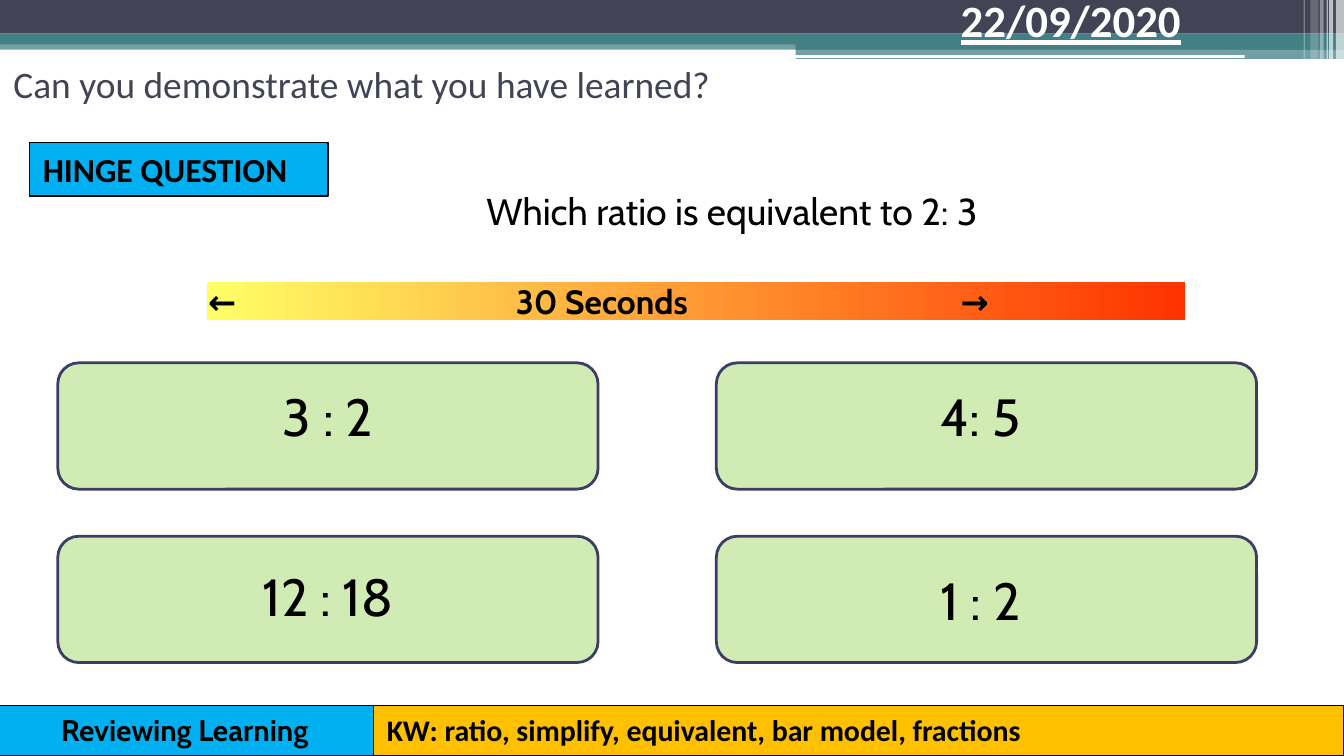
from typing import NamedTuple, Optional

from lxml.etree import SubElement
from pptx import Presentation
from pptx.dml.color import RGBColor
from pptx.enum.shapes import MSO_SHAPE
from pptx.enum.text import MSO_ANCHOR, PP_ALIGN
from pptx.oxml.ns import qn
from pptx.util import Inches, Pt


class Area(NamedTuple):
    left: float
    top: float
    width: float
    height: float

    def lengths(self):
        return [Inches(value) for value in self]


class Band(NamedTuple):
    area: Area
    color: str
    opacity: int = 100


class Style(NamedTuple):
    size: int
    font: str = "Cabin"
    color: str = "000000"
    bold: bool = False
    underline: bool = False
    align: PP_ALIGN = PP_ALIGN.LEFT
    wrap: bool = True
    anchor: MSO_ANCHOR = MSO_ANCHOR.TOP


class Answer(NamedTuple):
    text: str
    column: int
    row: int
    text_top: float


def paint(target, color: str, opacity: int = 100) -> None:
    target.solid()
    target.fore_color.rgb = RGBColor.from_string(color)
    if opacity < 100:
        # python-pptx has no public transparency setting
        tint = target._xPr.find(qn("a:solidFill"))[0]
        SubElement(tint, qn("a:alpha"), val=str(opacity * 1000))


def draw_shape(page, area: Area, color: str, opacity: int = 100,
               line: Optional[str] = None, line_width: float = 0.75,
               kind=MSO_SHAPE.RECTANGLE):
    shape = page.shapes.add_shape(kind, *area.lengths())
    shape.shadow.inherit = False
    paint(shape.fill, color, opacity)
    if line:
        paint(shape.line.fill, line)
        shape.line.width = Pt(line_width)
    else:
        shape.line.fill.background()
    return shape


def write(shape, text: str, style: Style):
    frame = shape.text_frame
    frame.word_wrap = style.wrap
    frame.vertical_anchor = style.anchor
    para = frame.paragraphs[0]
    para.alignment = style.align
    span = para.add_run()
    span.text = text
    span.font.name = style.font
    span.font.size = Pt(style.size)
    span.font.bold = style.bold
    span.font.underline = style.underline
    span.font.color.rgb = RGBColor.from_string(style.color)
    return para


def draw_text(page, area: Area, text: str, style: Style):
    return write(page.shapes.add_textbox(*area.lengths()), text, style)


def draw_label(page, area: Area, color: str, text: str, style: Style) -> None:
    write(draw_shape(page, area, color, line="000000"), text, style)


def draw_header(page) -> None:
    bands = [
        Band(Area(0, 0.3, 10, 0.07), "438086", 75),
        Band(Area(0, 0, 10, 0.25), "424456"),
        Band(Area(0, 0.25, 10, 0.08), "438086"),
        Band(Area(5.92, 0.3, 4.08, 0.07), "438086"),
        Band(Area(5.92, 0.36, 4.08, 0.15), "438086", 75),
        # Light stripes at the right edge
        Band(Area(9.94, 0, 0.06, 0.51), "FFFFFF", 65),
        Band(Area(9.89, 0, 0.03, 0.51), "FFFFFF", 65),
        Band(Area(9.87, 0, 0.01, 0.51), "FFFFFF", 60),
        Band(Area(9.82, 0, 0.03, 0.51), "FFFFFF", 40),
        Band(Area(9.75, 0, 0.06, 0.48), "FFFFFF", 20),
        Band(Area(9.7, 0, 0.01, 0.48), "FFFFFF", 30),
    ]
    for band in bands:
        draw_shape(page, *band)
    draw_shape(page, Area(5.91, 0.41, 3.35, 0.02), "FFFFFF",
               kind=MSO_SHAPE.ROUNDED_RECTANGLE)
    draw_text(page, Area(7.05, -0.1, 2.95, 0.4), "22/09/2020",
              Style(24, "Calibri", "FFFFFF", bold=True, underline=True))
    draw_shape(page, Area(5.87, 0.45, 4.13, 0.31), "FFFFFF",
               line="FFFFFF", line_width=1.5)


def draw_timer(page) -> None:
    bar = draw_shape(page, Area(1.54, 2.1, 7.28, 0.28), "FFFF66")
    bar.fill.gradient()
    bar.fill.gradient_angle = 0
    for stop, (position, color) in zip(bar.fill.gradient_stops,
                                       [(0, "FFFF66"), (1, "FF3300")]):
        stop.position = position
        stop.color.rgb = RGBColor.from_string(color)
    para = draw_text(page, Area(1.45, 2.04, 7.53, 0.4),
                     "←\t30 Seconds\t→", Style(18, bold=True))
    # Tab stops place the label and the right arrow
    tabs = SubElement(para._p.get_or_add_pPr(), qn("a:tabLst"))
    for position in (2.29, 5.6):
        SubElement(tabs, qn("a:tab"), pos=str(Inches(position)), algn="l")


def draw_answers(page) -> None:
    answers = [
        Answer("3 : 2", 0, 0, 2.81),
        Answer("4: 5 ", 1, 0, 2.81),
        Answer("12 : 18", 0, 1, 4.15),
        Answer("1 : 2 ", 1, 1, 4.18),
    ]
    for answer in answers:
        left = 0.43 + 4.9 * answer.column
        top = 2.7 + 1.29 * answer.row
        draw_shape(page, Area(left, top, 4.02, 0.94), "92D050", 42,
                   line="3D3E66", line_width=1.5,
                   kind=MSO_SHAPE.ROUNDED_RECTANGLE)
        draw_text(page, Area(left + 0.24, answer.text_top, 3.54, 0.57),
                  answer.text, Style(28, align=PP_ALIGN.CENTER))


def main() -> None:
    deck = Presentation()
    # Widescreen, 16 to 9
    deck.slide_width = Inches(10)
    deck.slide_height = deck.slide_width * 9 // 16
    page = deck.slides.add_slide(deck.slide_layouts[5])

    # Header and title
    draw_header(page)
    title = page.shapes.title
    title.left, title.top, title.width, title.height = Area(
        0, 0.18, 5.67, 0.88).lengths()
    write(title, "Can you demonstrate what you have learned?",
          Style(20, "Calibri", "424456", anchor=MSO_ANCHOR.MIDDLE))

    # Question, timer and answers
    draw_label(page, Area(0.22, 1.06, 2.22, 0.4), "00B0F0", "HINGE QUESTION",
               Style(18, "Calibri", bold=True))
    draw_text(page, Area(3.52, 1.35, 4.24, 0.44),
              "Which ratio is equivalent to 2: 3", Style(20, wrap=False))
    draw_answers(page)
    draw_timer(page)

    # Footer
    draw_label(page, Area(-0.03, 5.25, 2.81, 0.37), "00B0F0",
               "Reviewing Learning",
               Style(16, bold=True, align=PP_ALIGN.CENTER))
    draw_label(page, Area(2.78, 5.25, 7.22, 0.37), "FFC000",
               "KW: ratio, simplify, equivalent, bar model, fractions",
               Style(16, "Calibri", bold=True))
    deck.save("out.pptx")


if __name__ == "__main__":
    main()
